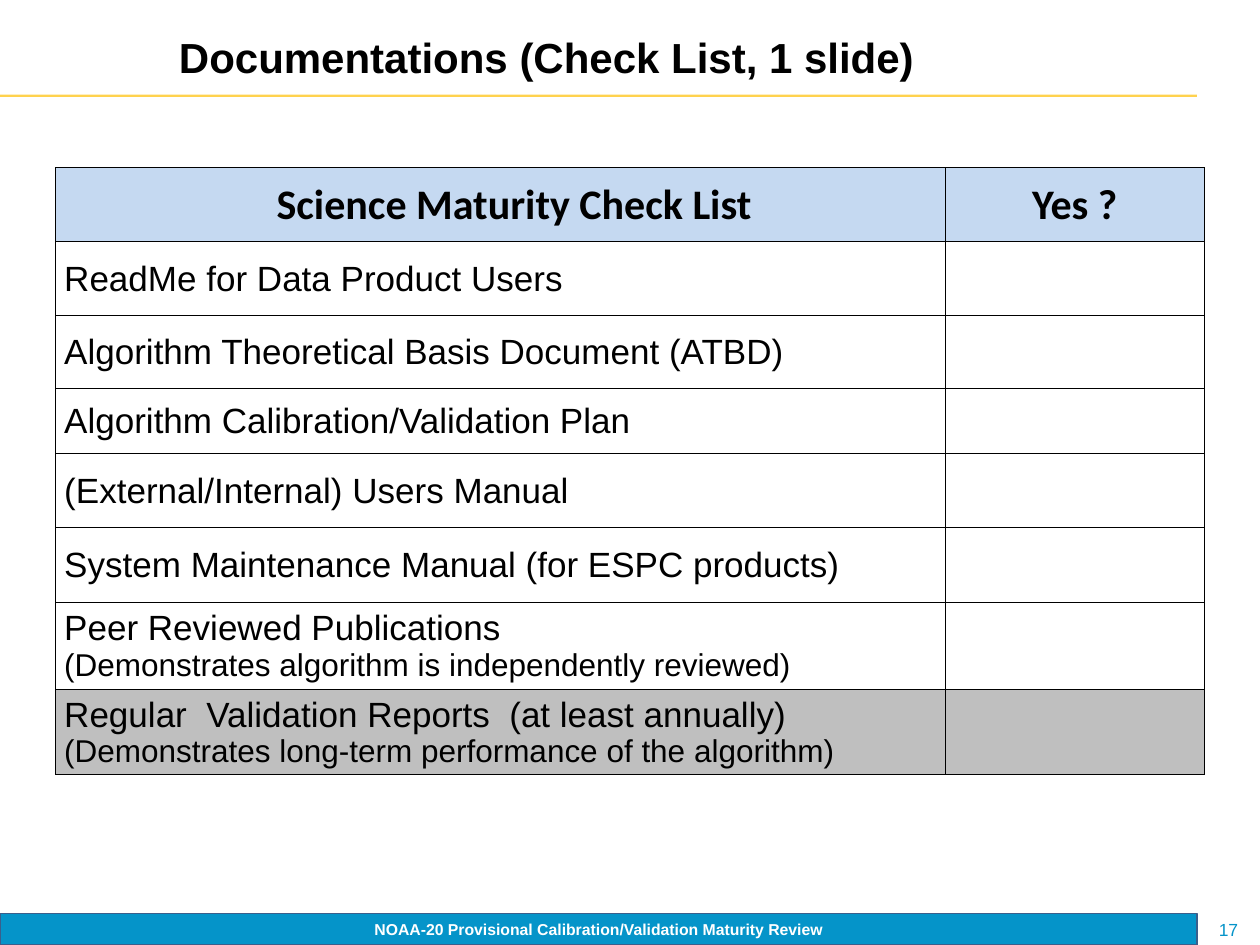
from pptx import Presentation
from pptx.dml.color import RGBColor
from pptx.enum import shapes, text
from pptx.oxml import parse_xml
from pptx.oxml.ns import nsdecls
from pptx.util import Inches, Pt

# Content
TITLE = "Documentations (Check List, 1 slide)"
REVIEW = "NOAA-20 Provisional Calibration/Validation Maturity Review"
PAGE = "17"
HEADINGS = ["Science Maturity Check List", "Yes ?"]
# Each item: row height, fill, lines of text
ITEMS = [
    (0.58, None, ["ReadMe for Data Product Users"]),
    (0.58, None, ["Algorithm Theoretical Basis Document (ATBD)"]),
    (0.52, None, ["Algorithm Calibration/Validation Plan"]),
    (0.59, None, ["(External/Internal) Users Manual"]),
    (0.59, None, ["System Maintenance Manual (for ESPC products)"]),
    (0.69, None, ["Peer Reviewed Publications",
                  "(Demonstrates algorithm is independently reviewed)"]),
    (0.68, "BFBFBF", ["Regular  Validation Reports  (at least annually)",
                      "(Demonstrates long-term performance of the algorithm)"]),
]
COLUMN_WIDTHS = [7.06, 2.06]
HEADING_HEIGHT = 0.59
BAND_WIDTH = 9.5


def color(value):
    return RGBColor.from_string(value)


def add_run(paragraph, words, size, fill="000000", bold=False, font="Arial"):
    run = paragraph.add_run()
    run.text = words
    run.font.name, run.font.size, run.font.bold = font, Pt(size), bold
    run.font.color.rgb = color(fill)


def add_band(slide, top, height, fill):
    band = slide.shapes.add_shape(shapes.MSO_SHAPE.RECTANGLE, 0, Inches(top),
                                  Inches(BAND_WIDTH), Inches(height))
    band.shadow.inherit = False
    band.fill.solid()
    band.fill.fore_color.rgb = color(fill)
    band.line.fill.background()
    return band


def clear_margins(frame):
    frame.margin_left = frame.margin_right = 0
    frame.margin_top = frame.margin_bottom = 0


def add_footer_text(slide, left, width, words, size, fill, bold):
    box = slide.shapes.add_textbox(Inches(left), Inches(7.25),
                                   Inches(width), Inches(0.25))
    frame = box.text_frame
    clear_margins(frame)
    frame.word_wrap = False
    frame.vertical_anchor = text.MSO_ANCHOR.MIDDLE
    frame.paragraphs[0].alignment = text.PP_ALIGN.CENTER
    add_run(frame.paragraphs[0], words, size, fill, bold)


def format_cell(cell, fill):
    cell.margin_left = cell.margin_right = cell.margin_top = Inches(0.01)
    cell.margin_bottom = 0
    cell.vertical_anchor = text.MSO_ANCHOR.MIDDLE
    properties = cell._tc.get_or_add_tcPr()
    for side in ("lnL", "lnR", "lnT", "lnB"):
        properties.append(parse_xml(
            f'<a:{side} {nsdecls("a")} w="{Pt(0.5)}"><a:solidFill>'
            f'<a:srgbClr val="000000"/></a:solidFill></a:{side}>'))
    if fill:
        cell.fill.solid()
        cell.fill.fore_color.rgb = color(fill)
    else:
        cell.fill.background()


def add_checklist(slide):
    heights = [HEADING_HEIGHT] + [height for height, _, _ in ITEMS]
    table = slide.shapes.add_table(
        len(heights), len(COLUMN_WIDTHS), Inches(0.44), Inches(1.33),
        Inches(sum(COLUMN_WIDTHS)), Inches(sum(heights))).table
    for column, width in zip(table.columns, COLUMN_WIDTHS):
        column.width = Inches(width)
    for row, height in zip(table.rows, heights):
        row.height = Inches(height)

    # Heading row
    for index, heading in enumerate(HEADINGS):
        cell = table.cell(0, index)
        format_cell(cell, "C5D9F1")
        paragraph = cell.text_frame.paragraphs[0]
        paragraph.alignment = text.PP_ALIGN.CENTER
        add_run(paragraph, heading, 24, bold=True, font="Calibri")
    table.cell(0, 0).margin_left = Inches(0.23)

    # Item rows, with an empty cell for the answer
    for row, (_, fill, lines) in enumerate(ITEMS, start=1):
        item, answer = table.cell(row, 0), table.cell(row, 1)
        format_cell(item, fill)
        format_cell(answer, fill)
        for index, line in enumerate(lines):
            frame = item.text_frame
            paragraph = frame.add_paragraph() if index else frame.paragraphs[0]
            paragraph.level = 1
            indent = paragraph._p.get_or_add_pPr()
            indent.set("marL", str(Inches(0.06)))
            indent.set("indent", "0")
            add_run(paragraph, line, 18 if index else 20)


def main():
    deck = Presentation()
    deck.slide_width, deck.slide_height = Inches(10), Inches(7.5)
    slide = deck.slides.add_slide(deck.slide_layouts[5])

    # Footer
    footer = add_band(slide, 7.25, 0.25, "0594C9")
    footer.line.color.rgb = color("3A5F8C")
    footer.line.width = 0
    add_footer_text(slide, BAND_WIDTH, 0.5, PAGE, 10, "0594C9", False)
    add_footer_text(slide, 0, BAND_WIDTH, REVIEW, 9, "FFFFFF", True)

    # Title and its rule
    add_band(slide, 0, 0.75, "FFFFFF")
    add_band(slide, 0.75, 0.02, "FFD24E")
    title = slide.shapes.title
    title.left, title.top = Inches(1.42), Inches(0.25)
    title.width, title.height = Inches(8.08), Inches(0.54)
    frame = title.text_frame
    clear_margins(frame)
    frame.auto_size = text.MSO_AUTO_SIZE.NONE
    frame.vertical_anchor = text.MSO_ANCHOR.TOP
    frame.paragraphs[0].alignment = text.PP_ALIGN.LEFT
    add_run(frame.paragraphs[0], TITLE, 24, bold=True)
    slide.shapes._spTree.append(title._element)  # in front of the bands

    add_checklist(slide)
    deck.save("out.pptx")


if __name__ == "__main__":
    main()
